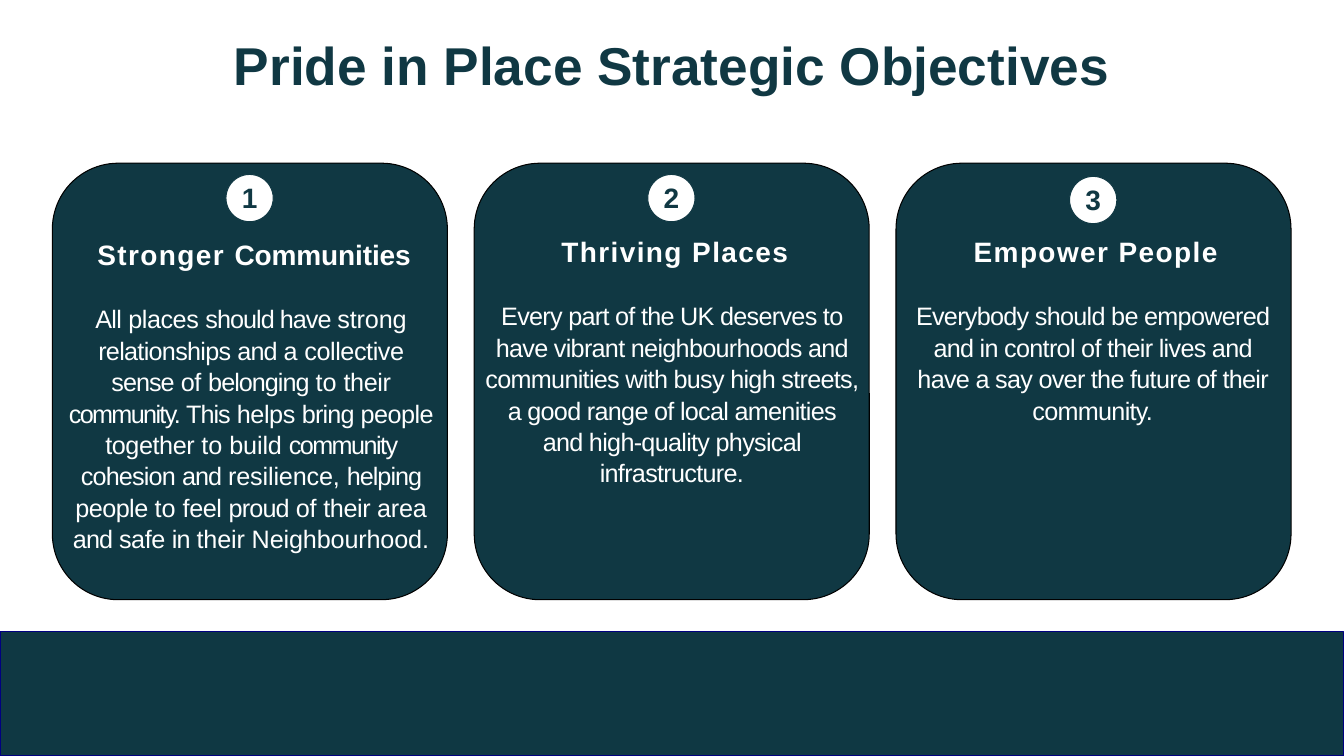
from dataclasses import dataclass

from pptx import Presentation
from pptx import util as u
from pptx.dml.color import RGBColor
from pptx.enum import shapes, text

TITLE = "Pride in Place Strategic Objectives"

# Every run is (words, letter spacing in points).
OBJECTIVES = [
    {
        "heading": [("Stronger ", 1), ("Communities", -0.1)],
        "body": [
            ("All ", -0.5), ("places ", -0.3), ("should have ", -0.7),
            ("strong ", -0.1), ("relationships ", -0.5), ("and ", -0.7),
            ("a ", -0.1), ("collective ", -0.3), ("sense ", -0.7),
            ("of ", -0.2), ("belonging ", -0.7), ("to ", 0),
            ("their ", -0.3), ("community. ", -1.2), ("This ", -0.7),
            ("helps ", -0.3), ("bring ", -0.6), ("people ", -0.4),
            ("together ", -0.3), ("to ", 0), ("build ", -0.1),
            ("community ", -1.1), ("cohesion ", -0.6), ("and ", -0.7),
            ("resilience, ", -0.1), ("helping ", -0.7), ("people ", -0.4),
            ("to ", 0), ("feel ", -0.3), ("proud ", -0.6), ("of ", -0.2),
            ("their ", -0.3), ("area ", -0.2), ("and ", -0.7),
            ("safe ", -0.3), ("in ", -0.7), ("their Neighbourhood.", -0.1),
        ],
        "text_top": 170, "text_height": 219.6, "badge_top": 124.6,
    },
    {
        "heading": [("Thriving Places", 1)],
        "body": [("Every part of the UK deserves to have vibrant neighbourhoods "
                  "and communities with busy high streets, a good range of local "
                  "amenities and high-quality physical infrastructure.", -0.5)],
        "text_top": 167.8, "text_height": 175.7, "badge_top": 124.6,
    },
    {
        "heading": [("Empower People", 1)],
        "body": [("Everybody should be empowered and in control of their lives "
                  "and have a say over the future of their community.", -0.5)],
        "text_top": 167.8, "text_height": 131.8, "badge_top": 126,
    },
]


@dataclass(frozen=True)
class Theme:
    font: str = "Arial"
    teal: str = "103843"
    band: str = "0F3843"
    band_line: str = "000080"
    white: str = "FFFFFF"
    black: str = "000000"
    title_size: float = 38
    heading_size: float = 20
    body_size: float = 18
    line_width: float = 0.75


THEME = Theme()
SLIDE_WIDTH, SLIDE_HEIGHT = 960, 540
BAND_TOP = 451.4
CARD_LEFT, CARD_TOP, CARD_WIDTH, CARD_HEIGHT = 37.4, 116.6, 282.2, 311.8
CARD_PITCH = 301.3
TEXT_LEFT, TEXT_WIDTH, TEXT_PITCH = 46.1, 266.4, 300.6
BADGE_INSET, BADGE_SIZE = 124, 33.8
NUMBER_WIDTH, NUMBER_HEIGHT = 25.9, 29.5


def points(*lengths):
    return [u.Pt(length) for length in lengths]


def add_panel(page, kind, frame, fill, line):
    shape = page.shapes.add_shape(kind, *points(*frame))
    shape.shadow.inherit = False
    shape.fill.solid()
    shape.fill.fore_color.rgb = RGBColor.from_string(fill)
    shape.line.color.rgb = RGBColor.from_string(line)
    shape.line.width = u.Pt(THEME.line_width)


def write(para, runs, *, size, color, bold=False, line_spacing=0.93, before=0):
    """Fill a centred paragraph with (words, letter spacing) runs."""
    para.alignment = text.PP_ALIGN.CENTER
    para.line_spacing = line_spacing
    para.space_before = u.Pt(before)
    for words, spacing in runs:
        span = para.add_run()
        span.text = words
        span.font.name = THEME.font
        span.font.size = u.Pt(size)
        span.font.bold = bold
        span.font.color.rgb = RGBColor.from_string(color)
        if spacing:
            span.font._element.set("spc", str(round(spacing * 100)))


def add_box(page, frame, wrap):
    box = page.shapes.add_textbox(*points(*frame)).text_frame
    box.word_wrap = wrap
    box.auto_size = text.MSO_AUTO_SIZE.SHAPE_TO_FIT_TEXT
    return box


def add_title(page):
    title = page.shapes.title
    title.left, title.top, title.width, title.height = points(48, 20.2, 864, 56.9)
    title.text_frame.vertical_anchor = text.MSO_ANCHOR.MIDDLE
    write(title.text_frame.paragraphs[0], [(TITLE, 0)],
          size=THEME.title_size, color=THEME.teal, bold=True)


def add_objective(page, index, objective):
    card_left = CARD_LEFT + index * CARD_PITCH
    add_panel(page, shapes.MSO_SHAPE.ROUNDED_RECTANGLE,
              (card_left, CARD_TOP, CARD_WIDTH, CARD_HEIGHT),
              THEME.teal, THEME.black)

    box = add_box(page, (TEXT_LEFT + index * TEXT_PITCH, objective["text_top"],
                         TEXT_WIDTH, objective["text_height"]), wrap=True)
    box.margin_left = box.margin_right = box.margin_bottom = 0
    box.margin_top = u.Pt(1.7)
    heading = box.paragraphs[0]
    write(heading, objective["heading"], size=THEME.heading_size,
          color=THEME.white, bold=True)
    heading._p.get_or_add_pPr().set("marL", str(u.Pt(4.3)))
    write(box.add_paragraph(), objective["body"], size=THEME.body_size,
          color=THEME.white, line_spacing=1.04, before=22)

    badge_left, badge_top = card_left + BADGE_INSET, objective["badge_top"]
    add_panel(page, shapes.MSO_SHAPE.OVAL,
              (badge_left, badge_top, BADGE_SIZE, BADGE_SIZE),
              THEME.white, THEME.teal)
    number = add_box(page, (badge_left + (BADGE_SIZE - NUMBER_WIDTH) / 2,
                            badge_top + 2.9, NUMBER_WIDTH, NUMBER_HEIGHT),
                     wrap=False)
    write(number.paragraphs[0], [(str(index + 1), 0)],
          size=THEME.heading_size, color=THEME.teal, bold=True)


def main():
    deck = Presentation()
    deck.slide_width, deck.slide_height = points(SLIDE_WIDTH, SLIDE_HEIGHT)
    page = deck.slides.add_slide(deck.slide_layouts.get_by_name("Title Only"))
    add_panel(page, shapes.MSO_SHAPE.RECTANGLE,
              (0, BAND_TOP, SLIDE_WIDTH, SLIDE_HEIGHT - BAND_TOP),
              THEME.band, THEME.band_line)
    add_title(page)
    for index, objective in enumerate(OBJECTIVES):
        add_objective(page, index, objective)
    deck.save("out.pptx")


if __name__ == "__main__":
    main()
